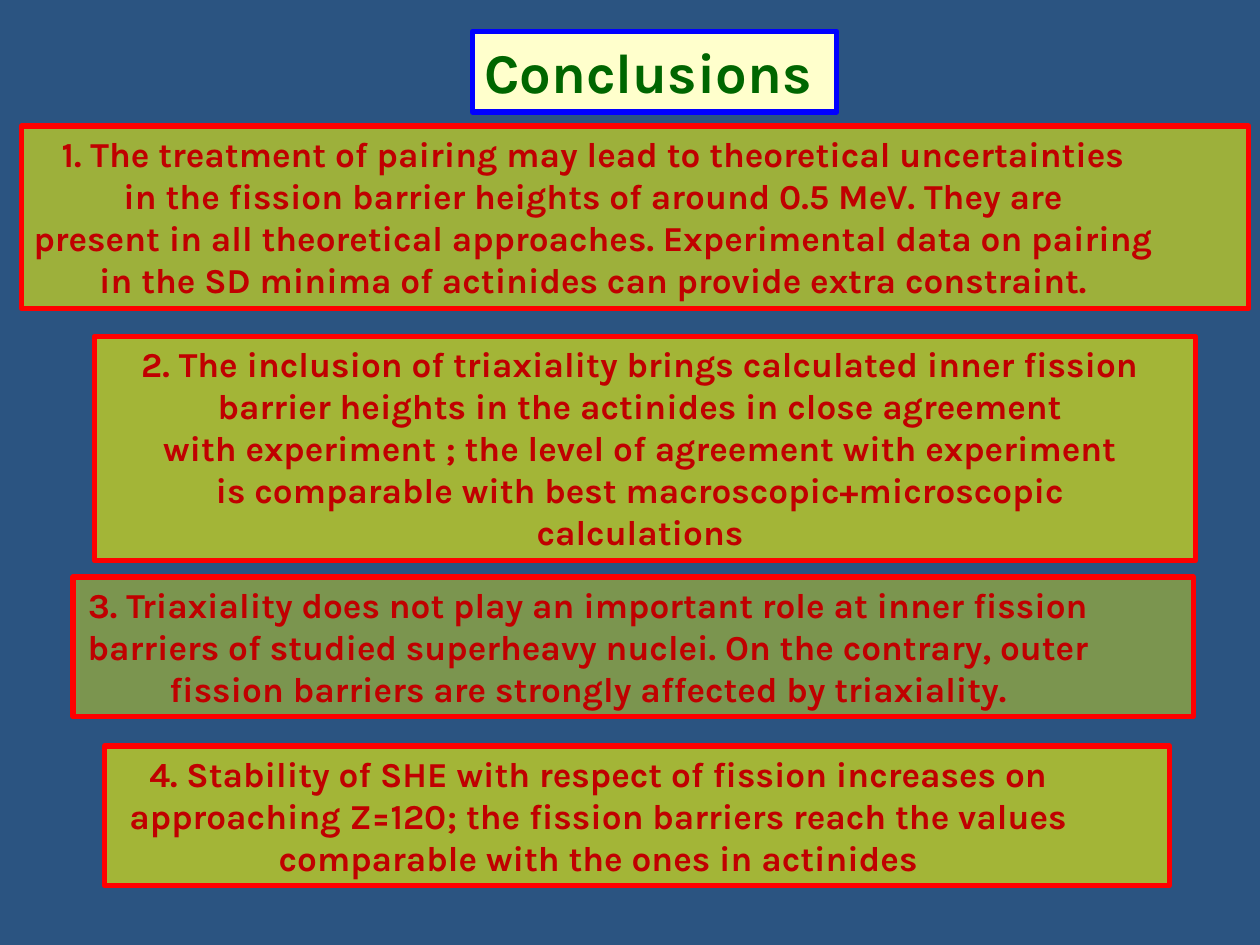
from dataclasses import dataclass

from lxml import etree
from pptx import Presentation
from pptx.dml.color import RGBColor
from pptx.enum.shapes import MSO_SHAPE
from pptx.enum.text import MSO_ANCHOR, MSO_AUTO_SIZE, PP_ALIGN
from pptx.oxml.ns import qn
from pptx.util import Inches, Pt

RECTANGLE = MSO_SHAPE.RECTANGLE
TOP = MSO_ANCHOR.TOP
NO_AUTOFIT = MSO_AUTO_SIZE.NONE
CENTER = PP_ALIGN.CENTER

TITLE_ONLY_LAYOUT = 5
FONT_NAME = "Karla"
COLORS = {
    "background": "2B5481",
    "title_fill": "FFFFCC",
    "title_line": "0000FF",
    "title_text": "006600",
    "box_fill": "FFFF00",
    "box_line": "FF0000",
    "box_text": "C00000",
}


@dataclass
class Conclusion:
    left: float
    top: float
    width: float
    height: float
    right_inset: float
    opacity: int  # percent
    lines: list[str]


CONCLUSIONS = [
    Conclusion(0.17, 1, 9.74, 1.45, 0.71, 54, [
        "1. The treatment of pairing may lead to theoretical uncertainties",
        "in the fission barrier heights of around 0.5 MeV. They are",
        "present in all theoretical approaches. Experimental data on pairing",
        "in the SD minima of actinides can provide extra constraint.",
    ]),
    Conclusion(0.75, 2.67, 8.74, 1.78, 0.13, 57, [
        "2. The inclusion of triaxiality brings calculated inner fission",
        "barrier heights in the actinides in close agreement",
        "with experiment ; the level of agreement with experiment",
        "is comparable with best macroscopic+microscopic",
        "calculations",
    ]),
    Conclusion(0.58, 4.58, 8.89, 1.11, 0.76, 38, [
        "3. Triaxiality does not play an important role at inner fission",
        "barriers of studied superheavy nuclei. On the contrary, outer",
        "fission barriers are strongly affected by triaxiality.",
    ]),
    Conclusion(0.83, 5.92, 8.45, 1.11, 0.66, 57, [
        "4. Stability of SHE with respect of fission increases on",
        "approaching Z=120; the fission barriers reach the values",
        "comparable with the ones in actinides",
    ]),
]


def color(name: str) -> RGBColor:
    return RGBColor.from_string(COLORS[name])


def style_box(box, role: str) -> None:
    """Fill and outline a box with the colours of its role."""
    box.fill.solid()
    box.fill.fore_color.rgb = color(f"{role}_fill")
    box.line.color.rgb = color(f"{role}_line")
    box.line.width = Pt(3)


def write_lines(box, lines: list[str], role: str, size: int, right_inset: float) -> None:
    """Write one centred paragraph per line."""
    frame = box.text_frame
    frame.word_wrap = True
    frame.auto_size = NO_AUTOFIT
    frame.vertical_anchor = TOP
    frame.margin_left = frame.margin_top = frame.margin_bottom = Inches(0.05)
    frame.margin_right = Inches(right_inset)
    frame.text = "\n".join(lines)
    for para in frame.paragraphs:
        para.alignment = CENTER
        para.space_before = Pt(0)
        para.font.name = FONT_NAME
        para.font.size = Pt(size)
        para.font.bold = True
        para.font.color.rgb = color(f"{role}_text")


def set_opacity(box, percent: int) -> None:
    fill_color = box.fill._xPr.find(qn("a:solidFill"))[0]
    etree.SubElement(fill_color, qn("a:alpha"), val=str(percent * 1000))


def add_title(page) -> None:
    title = page.shapes.title
    title.left, title.top = Inches(3.75), Inches(0.25)
    title.width, title.height = Inches(2.89), Inches(0.64)
    style_box(title, "title")
    write_lines(title, ["Conclusions"], "title", 32, 0.15)


def add_conclusion(page, item: Conclusion) -> None:
    box = page.shapes.add_shape(
        RECTANGLE, Inches(item.left), Inches(item.top),
        Inches(item.width), Inches(item.height),
    )
    box.shadow.inherit = False
    style_box(box, "box")
    set_opacity(box, item.opacity)
    write_lines(box, item.lines, "box", 20, item.right_inset)


def main() -> None:
    deck = Presentation()
    deck.slide_width, deck.slide_height = Inches(10), Inches(7.5)
    page = deck.slides.add_slide(deck.slide_layouts[TITLE_ONLY_LAYOUT])

    # Background
    page.background.fill.solid()
    page.background.fill.fore_color.rgb = color("background")

    # Title and numbered conclusions
    add_title(page)
    for item in CONCLUSIONS:
        add_conclusion(page, item)

    deck.save("out.pptx")


if __name__ == "__main__":
    main()
